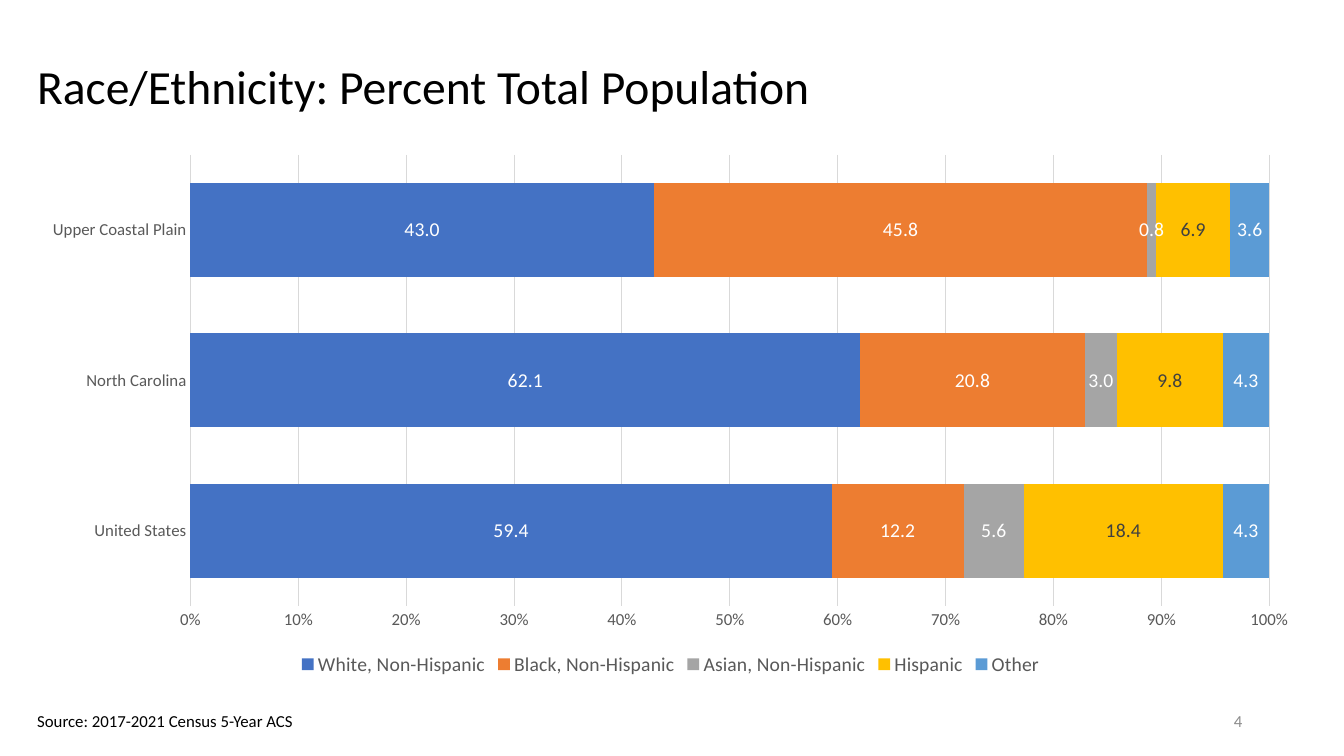
from dataclasses import dataclass

from pptx import Presentation
from pptx.chart.data import CategoryChartData
from pptx.dml.color import RGBColor
from pptx.enum.chart import XL_CHART_TYPE, XL_LABEL_POSITION, XL_LEGEND_POSITION, XL_TICK_MARK
from pptx.enum.text import MSO_ANCHOR, PP_ALIGN
from pptx.util import Inches, Pt


@dataclass(frozen=True)
class Theme:
    face: str = "Calibri"
    title_size: int = 34
    label_size: int = 14
    small_size: int = 12
    ink: str = "000000"
    axis_ink: str = "595959"
    number_ink: str = "8C8C8C"
    light_label: str = "FFFFFF"
    dark_label: str = "404040"
    grid: str = "D9D9D9"


THEME = Theme()
REGIONS = ("United States", "North Carolina", "Upper Coastal Plain")
# Group name, percent per region, bar colour, label colour
GROUPS = (
    ("White, Non-Hispanic", (59.4, 62.1, 43.0), "4472C4", THEME.light_label),
    ("Black, Non-Hispanic", (12.2, 20.8, 45.8), "ED7D31", THEME.light_label),
    ("Asian, Non-Hispanic", (5.6, 3.0, 0.8), "A5A5A5", THEME.light_label),
    ("Hispanic", (18.4, 9.8, 6.9), "FFC000", THEME.dark_label),
    ("Other", (4.3, 4.3, 3.6), "5B9BD5", THEME.light_label),
)
LEFT, WIDTH = 0.27, 12.76


def style_font(font, size, color):
    font.name = THEME.face
    font.size = Pt(size)
    font.color.rgb = RGBColor.from_string(color)


def style_line(line, color):
    line.color.rgb = RGBColor.from_string(color)
    line.width = Pt(0.75)


def add_text(slide, box, text, size, color, anchor=MSO_ANCHOR.MIDDLE,
             align=PP_ALIGN.LEFT, wrap=True, spacing=1.0):
    frame = slide.shapes.add_textbox(*map(Inches, box)).text_frame
    frame.word_wrap = wrap
    frame.vertical_anchor = anchor
    paragraph = frame.paragraphs[0]
    paragraph.text = text
    paragraph.alignment = align
    paragraph.line_spacing = spacing
    style_font(paragraph.font, size, color)


def style_axes(chart):
    for axis in (chart.category_axis, chart.value_axis):
        axis.major_tick_mark = axis.minor_tick_mark = XL_TICK_MARK.NONE
        style_font(axis.tick_labels.font, THEME.small_size, THEME.axis_ink)
    style_line(chart.category_axis.format.line, THEME.grid)

    percent_axis = chart.value_axis
    percent_axis.format.line.fill.background()
    percent_axis.has_major_gridlines = True
    style_line(percent_axis.major_gridlines.format.line, THEME.grid)
    percent_axis.tick_labels.number_format = "0%"
    percent_axis.tick_labels.number_format_is_linked = False


def style_group(group, color, label_color):
    group.format.fill.solid()
    group.format.fill.fore_color.rgb = RGBColor.from_string(color)
    labels = group.data_labels
    labels.show_value = True
    labels.number_format = "#,##0.0"
    labels.number_format_is_linked = False
    labels.position = XL_LABEL_POSITION.CENTER
    style_font(labels.font, THEME.label_size, label_color)


def add_population_chart(slide):
    population = CategoryChartData(number_format="#,##0.0")
    population.categories = REGIONS
    for name, percents, _, _ in GROUPS:
        population.add_series(name, percents)
    chart = slide.shapes.add_chart(
        XL_CHART_TYPE.BAR_STACKED_100, Inches(LEFT), Inches(1.43),
        Inches(WIDTH), Inches(5.32), population).chart
    style_font(chart.font, THEME.small_size, THEME.ink)
    chart.has_title = False
    chart.has_legend = True
    chart.legend.position = XL_LEGEND_POSITION.BOTTOM
    chart.legend.include_in_layout = False
    style_font(chart.legend.font, THEME.label_size, THEME.axis_ink)
    style_axes(chart)

    bars = chart.plots[0]
    bars.gap_width = 60
    bars.overlap = 100
    bars.vary_by_categories = False
    for group, (_, _, color, label_color) in zip(bars.series, GROUPS):
        style_group(group, color, label_color)


def main():
    deck = Presentation()
    deck.slide_width = Inches(13.33)
    deck.slide_height = Inches(7.5)
    slide = deck.slides.add_slide(deck.slide_layouts[6])

    add_population_chart(slide)
    add_text(slide, (LEFT, 0.34, WIDTH, 1.09), "Race/Ethnicity: Percent Total Population",
             THEME.title_size, THEME.ink, spacing=0.9)
    add_text(slide, (9.42, 6.95, 3, 0.4), "4", THEME.small_size, THEME.number_ink,
             align=PP_ALIGN.RIGHT)
    add_text(slide, (LEFT, 7, 2.78, 0.3), "Source: 2017-2021 Census 5-Year ACS",
             THEME.small_size, THEME.ink, anchor=MSO_ANCHOR.TOP, wrap=False)
    deck.save("out.pptx")


if __name__ == "__main__":
    main()
